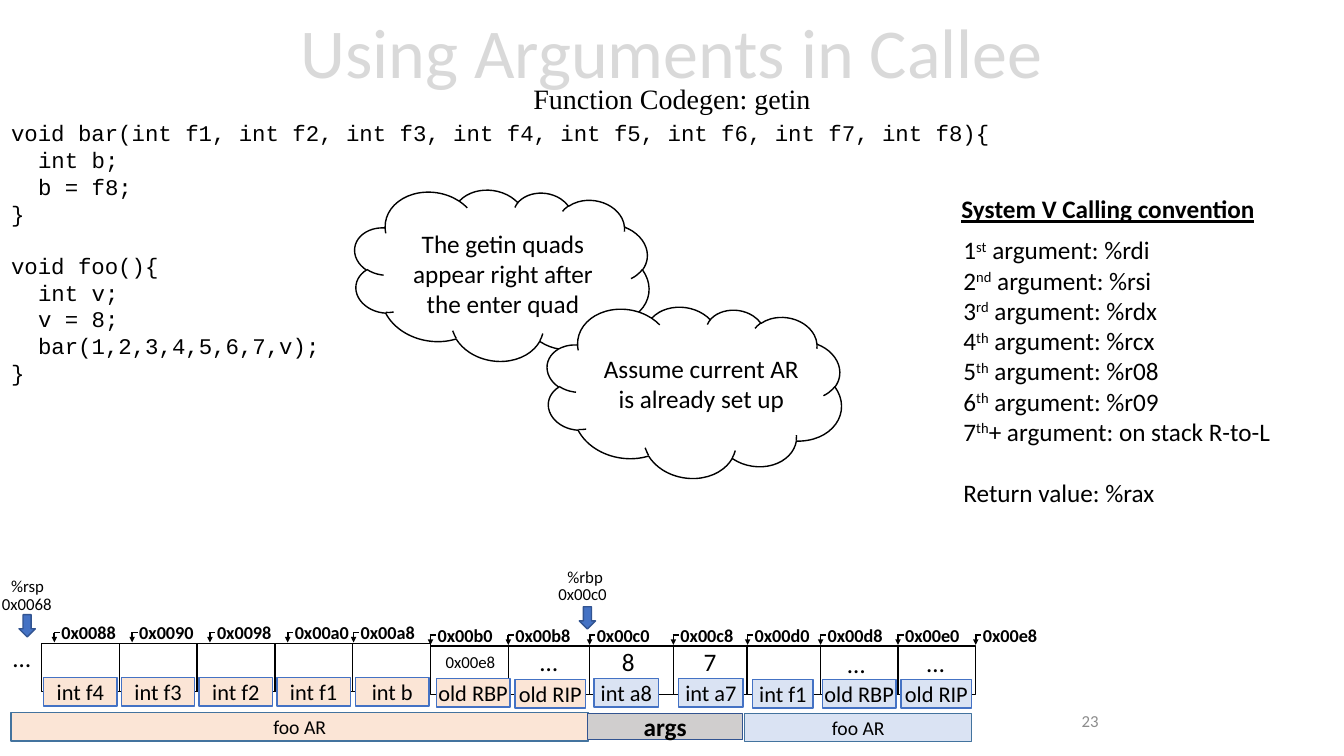
from dataclasses import dataclass

from lxml import etree
from pptx import Presentation
from pptx.dml.color import RGBColor
from pptx.enum.shapes import MSO_CONNECTOR, MSO_SHAPE
from pptx.enum.text import MSO_ANCHOR, MSO_AUTO_SIZE, PP_ALIGN
from pptx.oxml.ns import qn
from pptx.util import Cm, Pt

RECT, CLOUD, DOWN = MSO_SHAPE.RECTANGLE, MSO_SHAPE.CLOUD, MSO_SHAPE.DOWN_ARROW
LINE = MSO_CONNECTOR.STRAIGHT
LEFT, MID, RIGHT = PP_ALIGN.LEFT, PP_ALIGN.CENTER, PP_ALIGN.RIGHT
TOP, CENTRE = MSO_ANCHOR.TOP, MSO_ANCHOR.MIDDLE
FIXED = MSO_AUTO_SIZE.NONE


@dataclass(frozen=True)
class Theme:
    black: str = "000000"
    white: str = "FFFFFF"
    pale: str = "D9D9D9"
    dim: str = "8C8C8C"
    peach: str = "FBE5D6"
    sky: str = "DAE3F3"
    ash: str = "D0CECE"
    blue: str = "4472C4"
    navy: str = "325491"
    teal: str = "43739E"
    sans: str = "Calibri"
    mono: str = "Courier New"
    serif: str = "Times New Roman"
    head: float = 50
    sub: float = 20
    body: float = 18
    code: float = 16
    bar: float = 14
    addr: float = 13
    small: float = 12


T = Theme()
FLAT = dict.fromkeys(("margin_left", "margin_right", "margin_top", "margin_bottom"), 0)
SIDES = dict.fromkeys(("margin_left", "margin_right"), 0)

# left, width, mark, address, tag, tag left, tag top, tag width, tag fill
CELLS = [
    (1.05, 1.96, 1.37, "0x0088", "int f4", 1.1, 17.07, 1.85, T.peach),
    (3.01, 1.96, 3.33, "0x0090", "int f3", 3.06, 17.07, 1.85, T.peach),
    (4.97, 1.96, 5.29, "0x0098", "int f2", 5.02, 17.07, 1.85, T.peach),
    (6.93, 1.96, 7.25, "0x00a0", "int f1", 6.98, 17.07, 1.85, T.peach),
    (8.89, 1.96, 8.91, "0x00a8", "int b", 8.96, 17.07, 1.85, T.peach),
    (10.85, 1.96, 10.85, "0x00b0", "old RBP", 11, 17.1, 1.85, T.peach),
    (12.81, 2.06, 12.81, "0x00b8", "old RIP", 12.98, 17.12, 1.78, T.peach),
    (14.86, 2.24, 14.86, "0x00c0", "int a8", 14.97, 17.1, 1.63, T.sky),
    (16.97, 1.88, 16.97, "0x00c8", "int a7", 17.1, 17.1, 1.63, T.sky),
    (18.83, 1.85, 18.84, "0x00d0", "int f1", 18.97, 17.12, 1.52, T.sky),
    (20.68, 1.96, 20.68, "0x00d8", "old RBP", 20.73, 17.12, 1.85, T.sky),
    (22.63, 1.96, 22.63, "0x00e0", "old RIP", 22.71, 17.12, 1.78, T.sky),
]

CODE = [
    ("void bar(int f1, int f2, int f3, int f4, int f5, int f6, int f7, int f8){", 0),
    ("int b;", 1), ("b = f8;", 1), ("}", 0), ("void foo(){", 0),
    ("int v;", 1), ("v = 8;", 1), ("bar(1,2,3,4,5,6,7,v);", 1), ("}", 0),
]

RULES = [
    ("1", "st", " argument: %rdi"), ("2", "nd", " argument: %rsi"),
    ("3", "rd", " argument: %rdx"), ("4", "th", " argument: %rcx"),
    ("5", "th", " argument: %r08"), ("6", "th", " argument: %r09"),
    ("7", "th", "+ argument: on stack R-to-L"), ("Return value: %rax",),
]


def put(thing, form):
    for name, value in form.items():
        setattr(thing, name, value)


def style(run, size, color=T.black, face=T.sans, **more):
    put(run.font, {"name": face, "size": Pt(size), **more})
    run.font.color.rgb = RGBColor.from_string(color)


def write(frame, lines, size, align=LEFT, anchor=TOP, wrap=True, form=None, **font):
    put(frame, {"word_wrap": wrap, "vertical_anchor": anchor, **(form or {})})
    for i, line in enumerate(lines):
        para = frame.add_paragraph() if i else frame.paragraphs[0]
        para.alignment = align
        for j, part in enumerate((line,) if isinstance(line, str) else line):
            run = para.add_run()
            run.text = part
            style(run, size, **font)
            if j == 1:
                run._r.get_or_add_rPr().set("baseline", "30000")


def note(shapes, spot, lines, size, **form):
    box = shapes.add_textbox(*map(Cm, spot))
    write(box.text_frame, lines, size, **form)
    return box.text_frame


def block(shapes, kind, spot, fill, edge, turn=0):
    shape = shapes.add_shape(kind, *map(Cm, spot))
    put(shape, {"rotation": turn})
    shape.shadow.inherit = False
    shape.fill.solid()
    shape.fill.fore_color.rgb = RGBColor.from_string(fill)
    shape.line.color.rgb = RGBColor.from_string(edge)
    shape.line.width = Pt(1)
    return shape


def label(shapes, spot, text, size, fill, edge, **form):
    shape = block(shapes, RECT, spot, fill, edge)
    write(shape.text_frame, [text], size, align=MID, anchor=CENTRE, **form)


def stroke(shapes, ends, tip=False):
    line = shapes.add_connector(LINE, *map(Cm, ends))
    line.line.color.rgb = RGBColor.from_string(T.black)
    line.line.width = Pt(1.25)
    props = line.element.spPr
    if tip:
        etree.SubElement(props.find(qn("a:ln")), qn("a:tailEnd"),
                         type="triangle", w="sm", len="sm")
    etree.SubElement(props, qn("a:effectLst"))


def mark(shapes, x, y, text):
    stroke(shapes, (x, y, x, y + 0.25), tip=True)
    stroke(shapes, (x - 0.02, y, x + 0.14, y))
    note(shapes, (x + 0.18, y - 0.28, 1.47, 0.56), [text], T.addr, form=FLAT, bold=True)


def cloud(slide, x, y, lines, words):
    shapes = slide.shapes.add_group_shape().shapes
    block(shapes, CLOUD, (x, y, 7.49, 4.37), T.white, T.black, 8.4)
    block(shapes, RECT, (x + 5.18, y + 1.71, 1.32, 1.57), T.white, T.white)
    note(shapes, words, lines, T.body, align=MID)


def title(slide):
    head = slide.shapes.title
    put(head, {"left": 0, "top": 0, "width": Cm(33.87), "height": Cm(3.68)})
    put(head.text_frame, {"vertical_anchor": CENTRE, "auto_size": FIXED, "word_wrap": True})
    para = head.text_frame.paragraphs[0]
    put(para, {"alignment": MID, "line_spacing": 0.7})
    run = para.add_run()
    run.text = "Using Arguments in Callee"
    style(run, T.head, T.pale)
    para.add_line_break()
    run = para.add_run()
    run.text = "Function Codegen: getin"
    style(run, T.sub, face=T.serif)


def stack(slide):
    shapes = slide.shapes.add_group_shape().shapes
    for i, (x, wide, *_) in enumerate(CELLS):
        block(shapes, RECT, (x, 16.21 if i < 5 else 16.28, wide, 1.22), T.white, T.black)
    for i, (_, _, x, addr, tag, left, top, wide, fill) in enumerate(CELLS):
        mark(shapes, x, 15.94 if i < 5 else 16, addr)
        label(shapes, (left, top, wide, 0.72), tag, T.code, fill, T.blue, form=SIDES)
    mark(shapes, 24.59, 16, "0x00e8")
    for x, y, text in [(0.08, 16.05, "…"), (13.36, 16.15, "…"), (15.42, 16.15, "8"),
                       (17.48, 16.15, "7"), (21.11, 16.2, "…"), (23.11, 16.18, "…")]:
        wide = 0.97 if text == "…" else 0.84
        note(shapes, (x, y, wide, 1.02), [text], T.body, wrap=False)
    for x, y, text in [(0.28, 14.5, "%rsp"), (0.05, 14.96, "0x0068"), (14.3, 14.27, "%rbp"),
                       (14.07, 14.71, "0x00c0"), (11.23, 16.43, "0x00e8")]:
        note(shapes, (x, y, 1.5, 0.51), [text], T.small, form=FLAT)
    for x, y in [(0.48, 15.49), (14.6, 15.29)]:
        block(shapes, DOWN, (x, y, 0.41, 0.56), T.blue, T.navy)
    label(shapes, (18.77, 17.98, 5.72, 0.71), "foo AR", T.bar, T.sky, T.teal)
    label(shapes, (0.28, 17.96, 14.55, 0.71), "foo AR", T.bar, T.peach, T.teal)
    label(shapes, (14.81, 17.98, 3.91, 0.66), "args", T.body, T.ash, T.navy, bold=True)


def main():
    deck = Presentation()
    put(deck, {"slide_width": Cm(33.87), "slide_height": Cm(19.05)})
    slide = deck.slides.add_slide(deck.slide_layouts[5])
    shapes = slide.shapes
    title(slide)
    note(shapes, (20.32, 17.65, 7.62, 1.02), ["23"], T.small, align=RIGHT,
         anchor=CENTRE, color=T.dim)
    stack(slide)
    note(shapes, (23.98, 4.75, 7.95, 1.02), ["System V Calling convention"], T.body,
         wrap=False, bold=True, underline=True)
    rules = note(shapes, (24.03, 5.79, 8.38, 7.19), RULES, T.body, wrap=False)
    rules.paragraphs[-1].space_before = Pt(22)
    code = note(shapes, (0.03, 2.88, 25.55, 7.09), [text for text, _ in CODE], T.code,
                wrap=False, face=T.mono)
    for para, (_, depth) in zip(code.paragraphs, CODE):
        para._p.get_or_add_pPr().set("marL", str(Cm(0.68 * depth)))
    code.paragraphs[4].space_before = Pt(18)
    cloud(slide, 8.89, 4.72, ["The getin quads", "appear right after", "the enter quad"],
          (9.83, 5.62, 5.69, 2.57))
    cloud(slide, 13.74, 7.67, ["Assume current AR", "is already set up"],
          (14.83, 8.77, 5.69, 1.8))
    deck.save("out.pptx")


if __name__ == "__main__":
    main()
